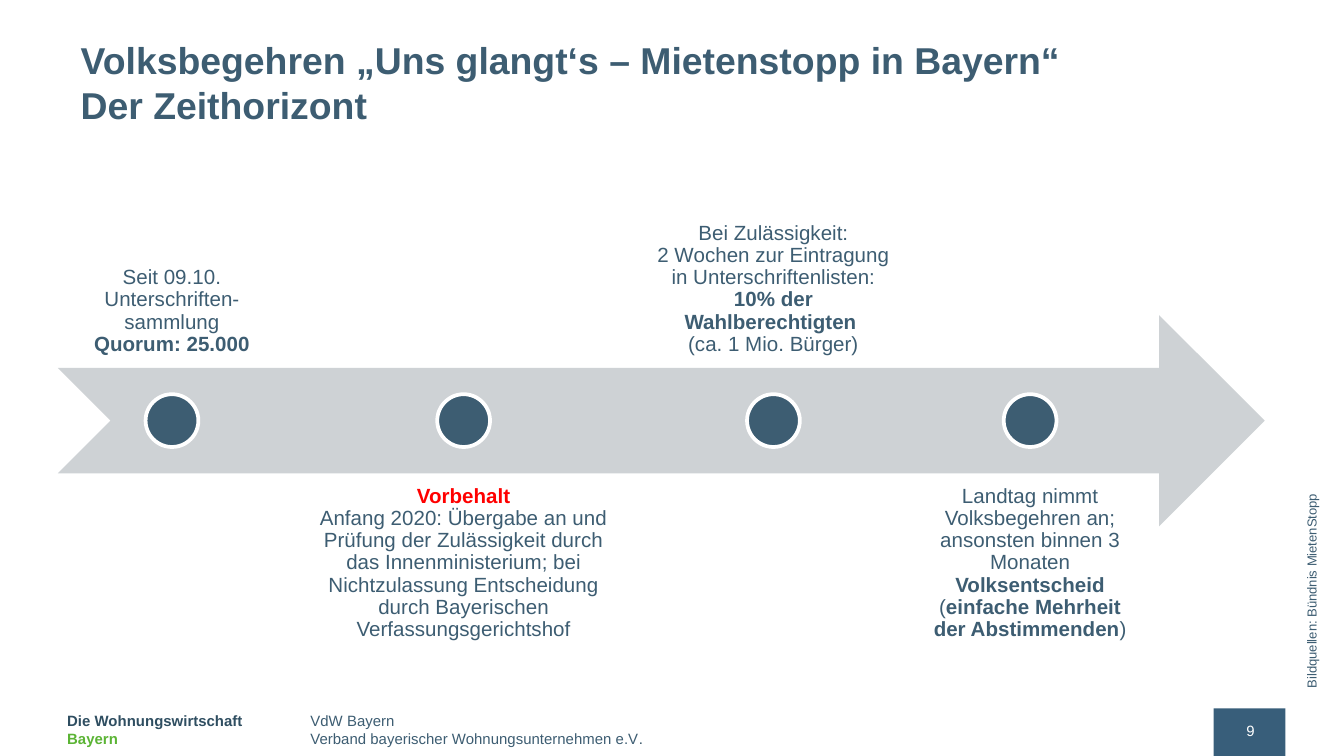
from typing import NamedTuple

from pptx import Presentation
from pptx import util as u
from pptx.dml.color import RGBColor
from pptx.enum import shapes, text

COLUMNS, ROWS = 100, 56.25
SLATE, NAVY, GREEN, RED = "3D5D72", "2F4E61", "5BB435", "FF0000"
SILVER, STEEL, WHITE = "CED2D5", "385E7A", "FFFFFF"

BAND_TOP, BAND_HEIGHT = 11.65, 39.3
ARROW_LEFT, ARROW_WIDTH = 4.3, 89.8
STRIP = 0.4 * BAND_HEIGHT
DOT = 0.1 * BAND_HEIGHT


class Run(NamedTuple):
    words: str
    bold: bool = False
    color: str = SLATE


class Box(NamedTuple):
    left: float
    top: float
    width: float
    height: float


class Milestone(NamedTuple):
    left: float
    width: float
    above: bool
    runs: list[Run]


MILESTONES = [
    Milestone(4.3, 17, True, [
        Run("Seit 09.10.\nUnterschriften-sammlung\n"),
        Run("Quorum: 25.000", True),
    ]),
    Milestone(22.1, 24.8, False, [
        Run("Vorbehalt\n", True, RED),
        Run("Anfang 2020: Übergabe an und Prüfung der Zulässigkeit durch das "
            "Innenministerium; bei Nichtzulassung Entscheidung durch "
            "Bayerischen Verfassungsgerichtshof"),
    ]),
    Milestone(47.8, 19.5, True, [
        Run("Bei Zulässigkeit:\n2 Wochen zur Eintragung in Unterschriftenlisten:\n"),
        Run("10% der Wahlberechtigten \n", True),
        Run("(ca. 1 Mio. Bürger)"),
    ]),
    Milestone(68.15, 17, False, [
        Run("Landtag nimmt Volksbegehren an; ansonsten binnen 3 Monaten "),
        Run("Volksentscheid", True),
        Run(" ("),
        Run("einfache Mehrheit der Abstimmenden", True),
        Run(")"),
    ]),
]


def cells(count: float) -> int:
    return u.Inches(count / 10)


def rgb(code: str) -> RGBColor:
    return RGBColor.from_string(code)


def place(item, box: Box) -> None:
    item.left, item.top, item.width, item.height = map(cells, box)


def write(frame, paragraphs: list[list[Run]], *, size: float,
          align=text.PP_ALIGN.LEFT, anchor=text.MSO_ANCHOR.TOP,
          spacing: float = 1.0, side: float = 1, edge: float = 0.5) -> None:
    frame.word_wrap = True
    frame.auto_size = text.MSO_AUTO_SIZE.NONE
    frame.vertical_anchor = anchor
    frame.margin_left = frame.margin_right = cells(side)
    frame.margin_top = frame.margin_bottom = cells(edge)
    for index, runs in enumerate(paragraphs):
        paragraph = frame.add_paragraph() if index else frame.paragraphs[0]
        paragraph.alignment = align
        paragraph.line_spacing = spacing
        paragraph.space_before = u.Pt(0)
        for run in runs:
            for number, line in enumerate(run.words.split("\n")):
                if number:
                    paragraph.add_line_break()
                if line:
                    piece = paragraph.add_run()
                    piece.text = line
                    piece.font.name = "Arial"
                    piece.font.size = u.Pt(size)
                    piece.font.bold = run.bold
                    piece.font.color.rgb = rgb(run.color)


def add_text(slide, box: Box, paragraphs: list[list[Run]], **style):
    label = slide.shapes.add_textbox(*map(cells, box))
    write(label.text_frame, paragraphs, **style)
    return label


def add_figure(slide, kind, box: Box, fill: str, outline: str | None = None) -> None:
    figure = slide.shapes.add_shape(kind, *map(cells, box))
    figure.shadow.inherit = False
    figure.fill.solid()
    figure.fill.fore_color.rgb = rgb(fill)
    if outline:
        figure.line.color.rgb = rgb(outline)
        figure.line.width = u.Pt(2)
    else:
        figure.line.fill.background()


def add_milestone(slide, milestone: Milestone) -> None:
    top = BAND_TOP if milestone.above else BAND_TOP + BAND_HEIGHT - STRIP
    anchor = text.MSO_ANCHOR.BOTTOM if milestone.above else text.MSO_ANCHOR.TOP
    add_text(slide, Box(milestone.left, top, milestone.width, STRIP),
             [milestone.runs], size=11, align=text.PP_ALIGN.CENTER,
             anchor=anchor, spacing=0.9, side=0.9, edge=0.9)
    dot_left = milestone.left + (milestone.width - DOT) / 2
    dot_top = BAND_TOP + (BAND_HEIGHT - DOT) / 2
    add_figure(slide, shapes.MSO_SHAPE.OVAL,
               Box(dot_left, dot_top, DOT, DOT), SLATE, WHITE)


def add_footer(slide) -> None:
    style = dict(size=8, anchor=text.MSO_ANCHOR.BOTTOM)
    add_figure(slide, shapes.MSO_SHAPE.RECTANGLE, Box(90.3, 52.7, 5.35, 4.5), STEEL)
    add_text(slide, Box(23.1, 52.6, 25.5, 3),
             [[Run("VdW Bayern")],
              [Run("Verband bayerischer Wohnungsunternehmen e.V"),
               Run(".", color=NAVY)]],
             side=0, edge=0, **style)
    add_text(slide, Box(5, 52.6, 18.1, 3),
             [[Run("Die Wohnungswirtschaft", True, NAVY)],
              [Run("Bayern", True, GREEN)]],
             side=0, edge=0, **style)
    add_text(slide, Box(90.4, 52.5, 5.3, 3), [[Run("9", color=WHITE)]],
             align=text.PP_ALIGN.CENTER, **style)


def main() -> None:
    deck = Presentation()
    deck.slide_width, deck.slide_height = cells(COLUMNS), cells(ROWS)
    slide = deck.slides.add_slide(deck.slide_layouts[5])

    headline = slide.shapes.title
    place(headline, Box(5, 2.3, 90, 9.4))
    write(headline.text_frame,
          [[Run("Volksbegehren „Uns glangt‘s – Mietenstopp in Bayern“\n"
                "Der Zeithorizont", True)]],
          size=20)

    add_footer(slide)
    add_figure(slide, shapes.MSO_SHAPE.NOTCHED_RIGHT_ARROW,
               Box(ARROW_LEFT, BAND_TOP + (BAND_HEIGHT - STRIP) / 2,
                   ARROW_WIDTH, STRIP), SILVER)
    for milestone in MILESTONES:
        add_milestone(slide, milestone)

    credit = add_text(slide, Box(96.5, 33.2, 3.2, 19),
                      [[Run("Bildquellen: Bündnis MietenStopp")]], size=7)
    credit.text_frame._txBody.bodyPr.set("vert", "vert270")
    deck.save("out.pptx")


if __name__ == "__main__":
    main()
